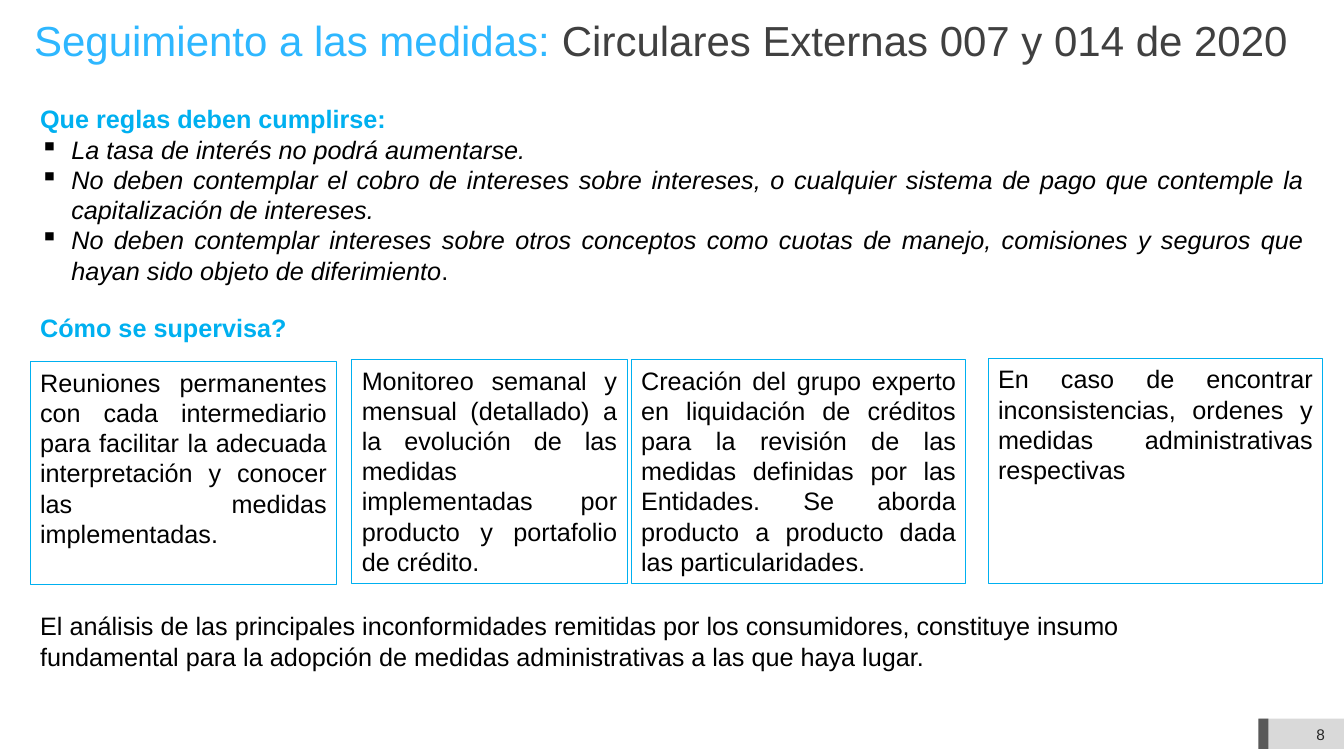
from dataclasses import dataclass
from typing import Optional

from lxml.etree import SubElement
from pptx import Presentation
from pptx.dml.color import RGBColor
from pptx.enum.shapes import MSO_SHAPE as Shape
from pptx.enum.text import MSO_ANCHOR as Anchor, PP_ALIGN as Align
from pptx.oxml.ns import qn
from pptx.util import Inches, Pt

COLORS = {
    "title": "2EB7FF", "accent": "00B0F0", "heading": "404040",
    "body": "000000", "number": "262626", "band": "D9D9D9", "mark": "595959",
}
MARGIN = 0.3


@dataclass
class Span:
    text: str
    color: str = "body"
    size: float = 18
    bold: bool = False
    italic: bool = False


@dataclass
class Line:
    spans: list[Span]
    align: Align = Align.LEFT
    bullet: bool = False


@dataclass
class Box:
    left: float
    top: float
    width: float
    height: float
    lines: list[Line]
    anchor: Anchor = Anchor.TOP
    border: Optional[str] = None


def rgb(name: str) -> RGBColor:
    return RGBColor.from_string(COLORS[name])


def add_bullet(para) -> None:
    properties = para._p.get_or_add_pPr()
    properties.set("marL", str(Inches(0.31)))
    properties.set("indent", str(-Inches(0.31)))
    SubElement(properties, qn("a:buChar")).set("char", "▪")


def add_box(page, box: Box) -> None:
    place = [Inches(n) for n in (box.left, box.top, box.width, box.height)]
    if box.border:
        shape = page.shapes.add_shape(Shape.RECTANGLE, *place)
        shape.shadow.inherit = False
        shape.fill.background()
        shape.line.color.rgb = rgb(box.border)
        shape.line.width = Pt(0.75)
    else:
        shape = page.shapes.add_textbox(*place)
    frame = shape.text_frame
    frame.word_wrap = True
    frame.vertical_anchor = box.anchor
    for index, line in enumerate(box.lines):
        para = frame.add_paragraph() if index else frame.paragraphs[0]
        para.alignment = line.align
        if line.bullet:
            add_bullet(para)
        for span in line.spans:
            run = para.add_run()
            run.text = span.text
            run.font.name = "Arial"
            run.font.size = Pt(span.size)
            run.font.bold = span.bold
            run.font.italic = span.italic
            run.font.color.rgb = rgb(span.color)


def add_block(page, left: float, width: float, color: str) -> None:
    block = page.shapes.add_shape(
        Shape.RECTANGLE, Inches(left), Inches(7.13), Inches(width), Inches(0.3))
    block.shadow.inherit = False
    block.fill.solid()
    block.fill.fore_color.rgb = rgb(color)
    block.line.fill.background()


def heading(text: str) -> Line:
    return Line([Span(text, "accent", bold=True)])


def rule(text: str, ending: str = "") -> Line:
    spans = [Span(text, italic=True)] + ([Span(ending)] if ending else [])
    return Line(spans, Align.JUSTIFY, bullet=True)


def card(left: float, top: float, width: float, height: float, text: str) -> Box:
    return Box(left, top, width, height, [Line([Span(text)], Align.JUSTIFY)],
               border="accent")


TITLE = Box(0.24, 0.09, 12.79, 0.61, [Line([
    Span("Seguimiento a las medidas: ", "title", 30),
    Span("Circulares Externas 007 y 014 de 2020", "heading", 30)])])
NUMBER = Box(12.53, 7.09, 0.71, 0.4, [Line([Span("8", "number", 11)], Align.RIGHT)],
             Anchor.MIDDLE)
RULES = Box(MARGIN, 0.98, 12.73, 1.92, [
    heading("Que reglas deben cumplirse:"),
    rule("La tasa de interés no podrá aumentarse."),
    rule("No deben contemplar el cobro de intereses sobre intereses, o cualquier "
         "sistema de pago que contemple la capitalización de intereses."),
    rule("No deben contemplar intereses sobre otros conceptos como cuotas de manejo, "
         "comisiones y seguros que hayan sido objeto de diferimiento", "."),
])
SUPERVISION = Box(MARGIN, 3.05, 11.55, 0.79, [heading("Cómo se supervisa?")])
CARDS = [
    card(MARGIN, 3.59, 3.04, 2.21,
         "Reuniones permanentes con cada intermediario para facilitar la adecuada "
         "interpretación y conocer las medidas implementadas."),
    card(3.49, 3.57, 2.73, 2.22,
         "Monitoreo semanal y mensual (detallado) a la evolución de las medidas "
         "implementadas por producto y portafolio de crédito."),
    card(6.26, 3.57, 3.32, 2.22,
         "Creación del grupo experto en liquidación de créditos para la revisión de "
         "las medidas definidas por las Entidades. Se aborda producto a producto dada "
         "las particularidades."),
    card(9.8, 3.56, 3.32, 2.23,
         "En caso de encontrar inconsistencias, ordenes y medidas administrativas "
         "respectivas"),
]
CLOSING = Box(MARGIN, 6.01, 11.17, 0.71, [Line([Span(
    "El análisis de las principales inconformidades remitidas por los consumidores, "
    "constituye insumo fundamental para la adopción de medidas administrativas a las "
    "que haya lugar.")])])


def main() -> None:
    deck = Presentation()
    deck.slide_width, deck.slide_height = Inches(13.33), Inches(7.5)
    page = deck.slides.add_slide(deck.slide_layouts[6])

    # Page number band
    add_block(page, 12.49, 0.84, "band")
    add_block(page, 12.48, 0.1, "mark")

    # Title, rules, supervision cards and closing remark
    for box in [TITLE, NUMBER, RULES, SUPERVISION, *CARDS, CLOSING]:
        add_box(page, box)

    deck.save("out.pptx")


if __name__ == "__main__":
    main()
